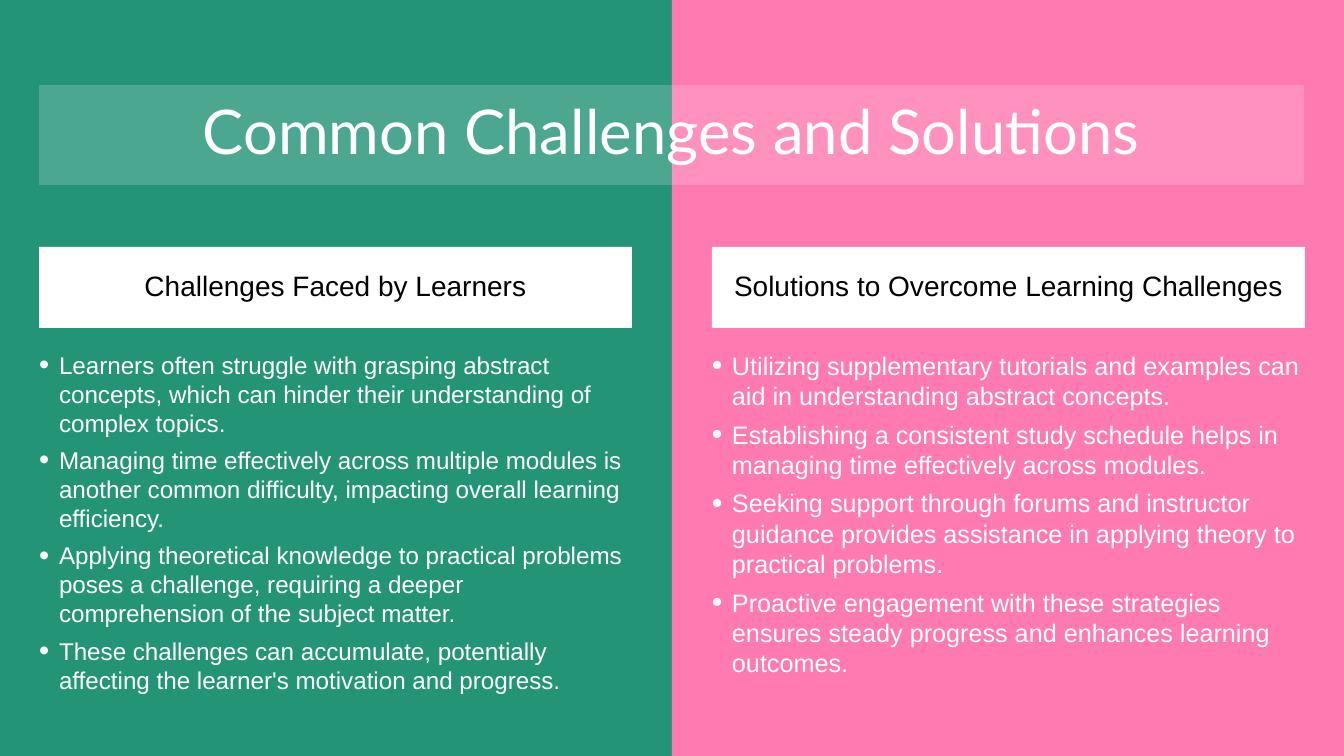
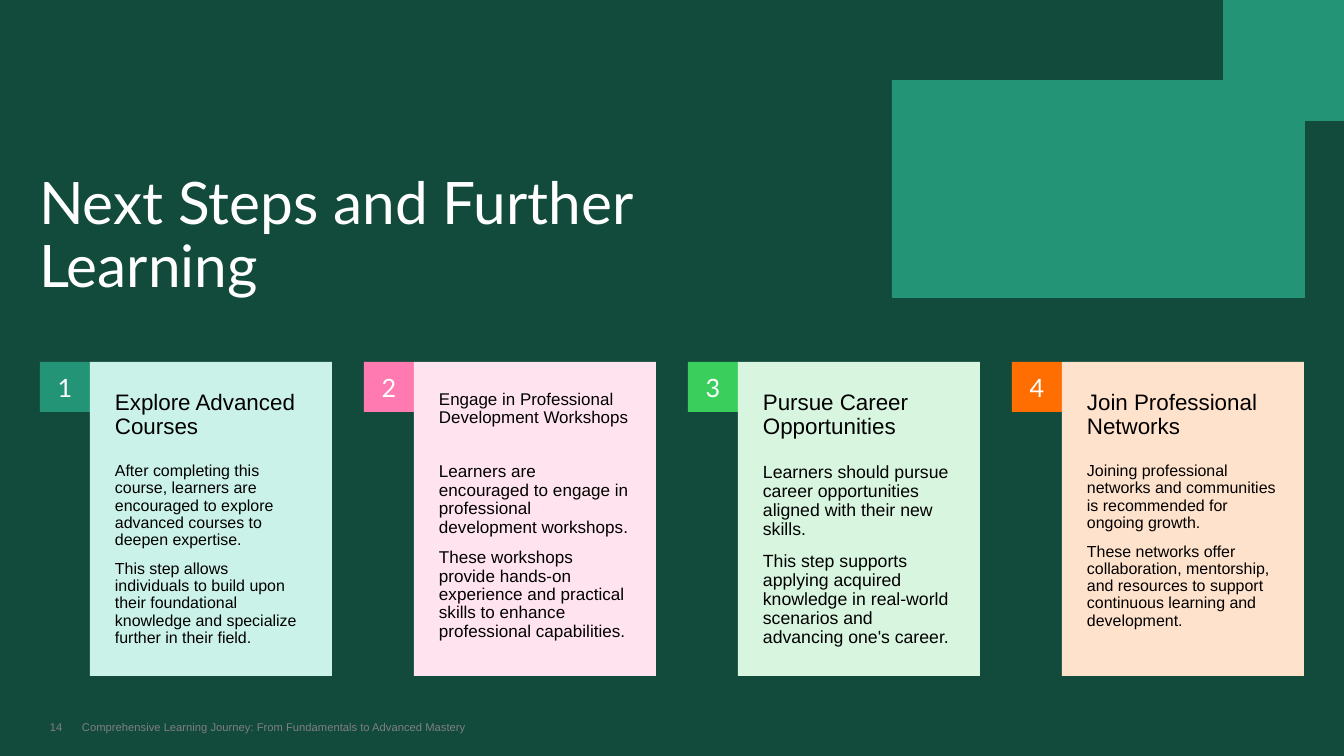
from dataclasses import dataclass

from lxml import etree
from pptx import Presentation
from pptx import util as u
from pptx.dml.color import RGBColor
from pptx.enum import shapes, text
from pptx.oxml import ns


# Theme: colours, fonts and type sizes
@dataclass(frozen=True)
class Theme:
    white: str = "FFFFFF"
    black: str = "000000"
    grey: str = "808080"
    dark: str = "124A3B"
    green: str = "249477"
    pink: str = "FE7AB0"
    badges: tuple = ("249477", "FE7AB0", "3ACE5D", "FF6E01")
    tints: tuple = ("CBF2E8", "FFE4EF", "D8F5DF", "FFE2CC")
    head_font: str = "Lato"
    body_font: str = "Arial"
    band_title: float = 44
    page_title: float = 41.8
    caption: float = 20
    badge: float = 18
    footer: float = 8
    bullets: tuple = (17.3, 18)
    card_heads: tuple = (16, 12.1, 16, 16)
    card_bodies: tuple = (11.4, 12.2, 12.6, 11.4)


T = Theme()
WIDTH, HEIGHT, MARGIN = 1344, 756, 39
LEFT, CENTER = text.PP_ALIGN.LEFT, text.PP_ALIGN.CENTER
TOP, MIDDLE = text.MSO_ANCHOR.TOP, text.MSO_ANCHOR.MIDDLE

# Content
COLUMNS = [
    ("Challenges Faced by Learners", [
        "Learners often struggle with grasping abstract concepts, which can hinder "
        "their understanding of complex topics.",
        "Managing time effectively across multiple modules is another common "
        "difficulty, impacting overall learning efficiency.",
        "Applying theoretical knowledge to practical problems poses a challenge, "
        "requiring a deeper comprehension of the subject matter.",
        "These challenges can accumulate, potentially affecting the learner's "
        "motivation and progress.",
    ]),
    ("Solutions to Overcome Learning Challenges", [
        "Utilizing supplementary tutorials and examples can aid in understanding "
        "abstract concepts.",
        "Establishing a consistent study schedule helps in managing time "
        "effectively across modules.",
        "Seeking support through forums and instructor guidance provides "
        "assistance in applying theory to practical problems.",
        "Proactive engagement with these strategies ensures steady progress and "
        "enhances learning outcomes.",
    ]),
]
CARDS = [
    ("Explore Advanced Courses", [
        "After completing this course, learners are encouraged to explore "
        "advanced courses to deepen expertise.",
        "This step allows individuals to build upon their foundational knowledge "
        "and specialize further in their field.",
    ]),
    ("Engage in Professional Development Workshops", [
        "Learners are encouraged to engage in professional development workshops.",
        "These workshops provide hands-on experience and practical skills to "
        "enhance professional capabilities.",
    ]),
    ("Pursue Career Opportunities", [
        "Learners should pursue career opportunities aligned with their new skills.",
        "This step supports applying acquired knowledge in real-world scenarios "
        "and advancing one's career.",
    ]),
    ("Join Professional Networks", [
        "Joining professional networks and communities is recommended for "
        "ongoing growth.",
        "These networks offer collaboration, mentorship, and resources to support "
        "continuous learning and development.",
    ]),
]


def px(n):
    return u.Emu(round(n * 914400 / 100.8))


def paint(sp, color, alpha=None):
    sp.fill.solid()
    sp.fill.fore_color.rgb = RGBColor.from_string(color)
    if alpha is not None:
        clr = sp.fill._xPr.find(".//" + ns.qn("a:srgbClr"))
        etree.SubElement(clr, ns.qn("a:alpha"), val=str(alpha * 1000))


def add_bullet(p):
    pPr = p._p.get_or_add_pPr()
    pPr.set("marL", str(px(20)))
    pPr.set("indent", str(px(-20)))
    etree.SubElement(pPr, ns.qn("a:buSzPct"), val="120000")
    etree.SubElement(pPr, ns.qn("a:buFont"), typeface="Arial")
    etree.SubElement(pPr, ns.qn("a:buChar"), char="•")


def write(sp, lines, size, color, font=T.body_font, align=LEFT, anchor=TOP,
          before=0, spacing=0.9, bullet=False):
    tf = sp.text_frame
    tf.word_wrap = True
    tf.auto_size = text.MSO_AUTO_SIZE.NONE
    tf.vertical_anchor = anchor
    tf.margin_left = tf.margin_right = tf.margin_top = tf.margin_bottom = 0
    for i, line in enumerate(lines):
        p = tf.add_paragraph() if i else tf.paragraphs[0]
        p.alignment = align
        p.line_spacing = spacing
        p.space_before = u.Pt(round(before, 1))
        if bullet:
            add_bullet(p)
        r = p.add_run()
        r.text = line
        r.font.name = font
        r.font.size = u.Pt(size)
        r.font.bold = False
        r.font.color.rgb = RGBColor.from_string(color)


def place(sp, x, y, w, h):
    sp.left, sp.top, sp.width, sp.height = px(x), px(y), px(w), px(h)
    return sp


def add_rect(s, x, y, w, h, color):
    sp = s.shapes.add_shape(shapes.MSO_SHAPE.RECTANGLE, px(x), px(y), px(w), px(h))
    sp.shadow.inherit = False
    sp.line.fill.background()
    paint(sp, color)
    return sp


def add_text(s, x, y, w, h, lines, size, color, **style):
    sp = s.shapes.add_textbox(px(x), px(y), px(w), px(h))
    write(sp, lines, size, color, **style)


def add_slide(prs, layout, color):
    s = prs.slides.add_slide(prs.slide_layouts[layout])
    paint(s.background, color)
    return s


def add_title(s, x, y, w, h, title, size, **style):
    sp = place(s.shapes.title, x, y, w, h)
    write(sp, [title], size, T.white, font=T.head_font, **style)
    return sp


def add_column(s, i, caption, bullets):
    x, w = MARGIN + i * 673, 593
    head = place(s.placeholders[1 + 2 * i], x, 247, w, 81)
    paint(head, T.white)
    write(head, [caption], T.caption, T.black, align=CENTER, anchor=MIDDLE, before=10)
    body = place(s.placeholders[2 + 2 * i], x, 350, w, 345)
    size = T.bullets[i]
    write(body, bullets, size, T.white, before=size / 3, spacing=1.0, bullet=True)


def add_card(s, i, heading, lines):
    x, y, badge, pad = 40 + i * 324, 362, 50, 25
    sp = add_rect(s, x, y, badge, badge, T.badges[i])
    write(sp, [str(i + 1)], T.badge, T.white, font=T.head_font, align=CENTER,
          anchor=MIDDLE, spacing=1.0)
    x += badge
    add_rect(s, x, y, 242, 314, T.tints[i])
    head, body = T.card_heads[i], T.card_bodies[i]
    add_text(s, x + pad, 391, 192, 52, [heading], head, T.black, before=head * 0.625)
    add_text(s, x + pad, 463, 192, 184, lines, body, T.black, before=body * 0.72)


def add_footer(s, number, label):
    for x, w, line in ((50, 20, number), (82, 635, label)):
        add_text(s, x, 718, w, 20, [line], T.footer, T.grey, anchor=MIDDLE, before=10)


def build_comparison(prs):
    s = add_slide(prs, 4, T.green)
    half = add_rect(s, WIDTH // 2, 0, WIDTH // 2, HEIGHT, T.pink)
    s.shapes._spTree.insert(2, half._element)  # behind the placeholders
    for i, column in enumerate(COLUMNS):
        add_column(s, i, *column)
    band = add_title(s, MARGIN, 85, 1265, 100, "Common Challenges and Solutions",
                     T.band_title, align=CENTER, anchor=MIDDLE)
    paint(band, T.white, alpha=18)


def build_next_steps(prs):
    s = add_slide(prs, 5, T.dark)
    add_title(s, MARGIN, 174, 759, 126, "Next Steps and Further Learning", T.page_title)
    # Corner blocks
    add_rect(s, WIDTH - 121, 0, 121, 121, T.green)
    add_rect(s, 892, 80, 413, 218, T.green)
    for i, card in enumerate(CARDS):
        add_card(s, i, *card)
    add_footer(s, "14",
               "Comprehensive Learning Journey: From Fundamentals to Advanced Mastery")


def main():
    prs = Presentation()
    prs.slide_width, prs.slide_height = px(WIDTH), px(HEIGHT)
    build_comparison(prs)
    build_next_steps(prs)
    prs.save("out.pptx")


if __name__ == "__main__":
    main()
